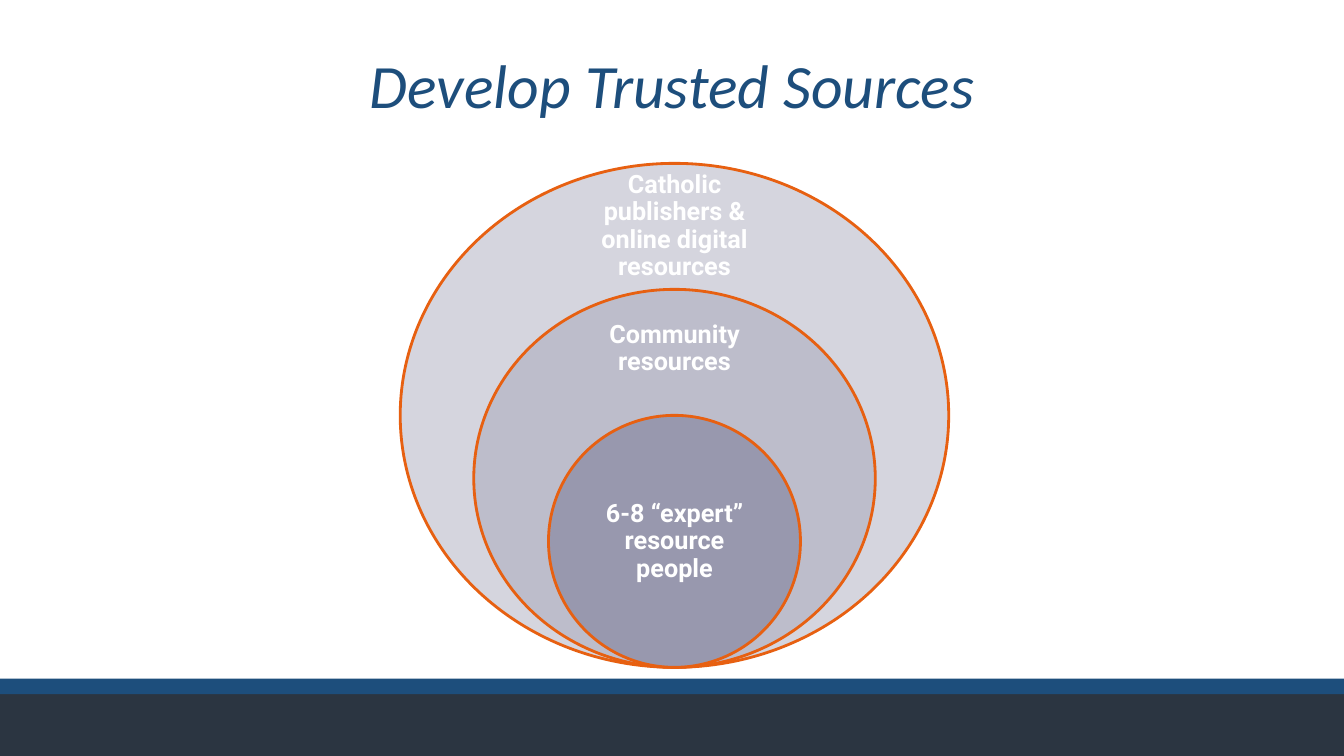
import pptx
import pptx.dml.color
import pptx.enum.shapes
import pptx.enum.text
import pptx.util

COLORS = {
    "navy": "2B3541",
    "blue": "1D4E7C",
    "orange": "E76011",
    "white": "FFFFFF",
    "outer": "D5D5DE",
    "middle": "BDBDCB",
    "inner": "9898AE",
}
COLUMNS, ROWS = 160, 90


def rgb(color):
    return pptx.dml.color.RGBColor.from_string(COLORS[color])


def write(frame, text, font="Roboto", size=18, color="white", bold=False, italic=False):
    paragraph = frame.paragraphs[0]
    paragraph.alignment = pptx.enum.text.PP_ALIGN.CENTER
    paragraph.line_spacing = 0.9
    run = paragraph.add_run()
    run.text = text
    run.font.name = font
    run.font.size = pptx.util.Pt(size)
    run.font.bold = bold
    run.font.italic = italic
    run.font.color.rgb = rgb(color)


class SlideBuilder:
    def __init__(self, deck):
        self.slide = deck.slides.add_slide(deck.slide_layouts[6])
        self.column = deck.slide_width / COLUMNS
        self.row = deck.slide_height / ROWS

    def place(self, left, top, width, height):
        return (
            round(left * self.column),
            round(top * self.row),
            round(width * self.column),
            round(height * self.row),
        )

    def shape(self, preset, area, fill):
        shape = self.slide.shapes.add_shape(preset, *self.place(*area))
        shape.shadow.inherit = False
        shape.fill.solid()
        shape.fill.fore_color.rgb = rgb(fill)
        return shape

    def band(self, top, height, fill):
        area = (0, top, COLUMNS, height)
        band = self.shape(pptx.enum.shapes.MSO_SHAPE.RECTANGLE, area, fill)
        band.line.fill.background()

    def circle(self, center, bottom, width, height, fill):
        area = (center - width / 2, bottom - height, width, height)
        circle = self.shape(pptx.enum.shapes.MSO_SHAPE.OVAL, area, fill)
        circle.line.color.rgb = rgb("orange")
        circle.line.width = pptx.util.Pt(2)

    def text(self, area, text, inset=None, anchor="TOP", **style):
        frame = self.slide.shapes.add_textbox(*self.place(*area)).text_frame
        frame.word_wrap = True
        frame.vertical_anchor = pptx.enum.text.MSO_ANCHOR[anchor]
        if inset is not None:
            frame.margin_left = frame.margin_right = pptx.util.Inches(inset)
            frame.margin_top = frame.margin_bottom = pptx.util.Inches(inset)
        write(frame, text, **style)


def main():
    deck = pptx.Presentation()
    deck.slide_width = pptx.util.Inches(13.33)
    deck.slide_height = pptx.util.Inches(7.5)
    builder = SlideBuilder(deck)

    builder.band(82.65, 7.35, "navy")
    builder.band(80.8, 1.85, "blue")
    builder.text((6.6, 6, 146.9, 10.2), "Develop Trusted Sources",
                 font="Calibri", size=44, color="blue", italic=True)

    center, bottom = 80.3, 79.45
    sources = [
        ("Catholic publishers & online digital resources", "outer", 65.3, 60, 22.8, 22.45, 9),
        ("Community resources", "middle", 47.8, 45, 22.3, 37.3, 8.4),
        ("6-8 “expert” resource people", "inner", 30, 30, 21.25, 57, 15),
    ]
    for label, fill, width, height, label_width, label_top, label_height in sources:
        builder.circle(center, bottom, width, height, fill)
        label_area = (center - label_width / 2, label_top, label_width, label_height)
        builder.text(label_area, label, inset=0.14, anchor="MIDDLE", bold=True)

    deck.save("out.pptx")


if __name__ == "__main__":
    main()
